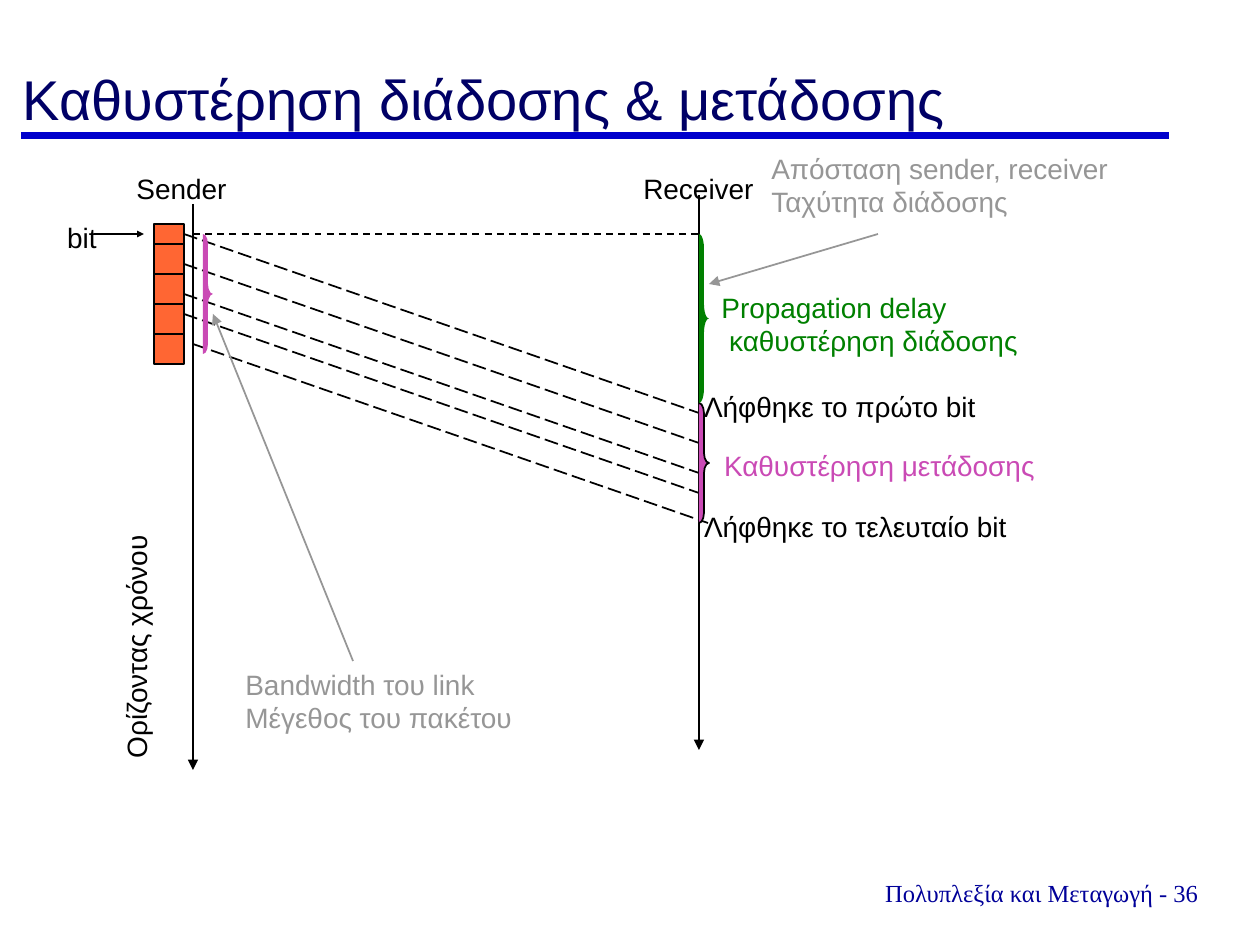
from lxml import etree
from pptx import Presentation
from pptx import util as u
from pptx.dml.color import RGBColor
from pptx.enum import dml, shapes, text
from pptx.oxml.ns import qn

PX = 914400 / 126
COLORS = {
    "black": "000000", "title": "000066", "rule": "0000CC", "footer": "000099",
    "bit": "FF6633", "transmission": "CA4AB5", "propagation": "008000", "note": "969696",
}
LEFT, CENTER, RIGHT = text.PP_ALIGN.LEFT, text.PP_ALIGN.CENTER, text.PP_ALIGN.RIGHT
LONG_DASH, DASH = dml.MSO_LINE.LONG_DASH, dml.MSO_LINE.DASH
SPAN = 506          # sender axis to receiver axis
BIT = 30            # side of one bit cell
PROPAGATION = 169
TRANSMISSION = 120


def px(*lengths):
    return [u.Emu(round(length * PX)) for length in lengths]


def rgb(name):
    return RGBColor.from_string(COLORS[name])


def add_line(slide, x1, y1, x2, y2, color="black", width=1, dash=None, arrow=None, size="med"):
    """Draw a line; arrow is "headEnd" (start) or "tailEnd" (finish)."""
    line = slide.shapes.add_connector(shapes.MSO_CONNECTOR.STRAIGHT, *px(x1, y1, x2, y2))
    line.line.color.rgb = rgb(color)
    line.line.width = u.Pt(width)
    if dash:
        line.line.dash_style = dash
    properties = line._element.spPr
    if arrow:
        etree.SubElement(properties.find(qn("a:ln")), qn("a:" + arrow),
                         type="triangle", w=size, len=size)
    etree.SubElement(properties, qn("a:effectLst"))


def add_text(slide, left, top, width, height, *lines, color="black", align=LEFT,
             size=16, font="Arial", wrap=False, anchor=text.MSO_ANCHOR.TOP, rotation=0):
    box = slide.shapes.add_textbox(*px(left, top, width, height))
    box.rotation = rotation
    frame = box.text_frame
    frame_format = {"word_wrap": wrap, "vertical_anchor": anchor}
    for name, value in frame_format.items():
        setattr(frame, name, value)
    frame.text = "\n".join(lines)
    for paragraph in frame.paragraphs:
        paragraph.alignment = align
        letters = paragraph.runs[0].font
        for name, value in {"name": font, "size": u.Pt(size)}.items():
            setattr(letters, name, value)
        letters.color.rgb = rgb(color)


def add_filled(slide, kind, left, top, width, height, fill, outline=None):
    shape = slide.shapes.add_shape(kind, *px(left, top, width, height))
    shape.shadow.inherit = False
    shape.fill.solid()
    shape.fill.fore_color.rgb = rgb(fill)
    if outline:
        shape.line.color.rgb = rgb(outline)
        shape.line.width = u.Pt(1)
    else:
        shape.line.fill.background()
    return shape


def add_brace(slide, left, top, height, fill, outline=None):
    brace = add_filled(slide, shapes.MSO_SHAPE.RIGHT_BRACE, left, top, 10, height, fill, outline)
    brace.adjustments[0] = height / TRANSMISSION
    brace.adjustments[1] = 0.5


def heading(slide, left, top):
    add_line(slide, left + 11, top + 104, left + 1159, top + 104, "rule", 4)
    add_text(slide, left, top, 1218, 106, "Καθυστέρηση διάδοσης & μετάδοσης", color="title",
             size=32, wrap=True, anchor=text.MSO_ANCHOR.BOTTOM)


def footer(slide, left, top):
    add_text(slide, left, top, 368, 42, "Πολυπλεξία και Μεταγωγή - 36 ", color="footer",
             align=CENTER, size=14, font="Times New Roman", wrap=True)


def signals(slide, axis, start):
    """Dashed paths of the bits, from the sender axis at the start time."""
    for delay, shift in ((0, 0), (30, 0), (60, 0), (80, 0), (110, 9)):
        x, y = axis - 9 + shift, start + delay
        add_line(slide, x, y, x + SPAN + 9, y + 179, dash=LONG_DASH)
    add_line(slide, axis, start, axis + SPAN, start, dash=DASH)


def sender(slide, axis, start):
    """Sender side, placed around its axis at the start time."""
    add_line(slide, axis, start - 30, axis, start + 536, arrow="tailEnd")
    add_text(slide, axis - 70, start - 69, 116, 47, "Sender", align=RIGHT)
    add_text(slide, axis - 182, start + 391, 251, 47, "Ορίζοντας χρόνου",
             align=RIGHT, rotation=270)
    add_text(slide, axis - 139, start - 20, 55, 47, "bit", align=RIGHT)
    add_line(slide, axis - 99, start, axis - 49, start, arrow="tailEnd", size="sm")
    for cell_top in (-10, *(10 + BIT * i for i in range(4))):
        add_filled(slide, shapes.MSO_SHAPE.RECTANGLE, axis - 39, start + cell_top,
                   BIT, BIT, "bit", "black")
    add_brace(slide, axis + 10, start, TRANSMISSION, "transmission")
    add_line(slide, axis + 20, start + 80, axis + 160, start + 427, "note", arrow="headEnd")
    add_text(slide, axis + 40, start + 427, 294, 81,
             "Bandwidth του link", "Μέγεθος του πακέτου", color="note")


def receiver(slide, axis, start):
    """Receiver side, placed around its axis at the start time."""
    first_bit = start + PROPAGATION
    add_line(slide, axis, start - 39, axis, start + 516, arrow="tailEnd")
    add_text(slide, axis - 69, start - 69, 136, 47, "Receiver", align=RIGHT)
    add_text(slide, axis - 10, first_bit - 20, 299, 47, "Λήφθηκε το πρώτο bit", align=RIGHT)
    add_text(slide, axis - 10, first_bit + 100, 330, 81, "Λήφθηκε το τελευταίο bit",
             align=RIGHT)
    add_brace(slide, axis, first_bit, TRANSMISSION, "transmission", "black")
    add_brace(slide, axis, start, PROPAGATION, "propagation")
    add_text(slide, axis + 10, start + 50, 323, 81,
             "Propagation delay", " καθυστέρηση διάδοσης", color="propagation")
    add_text(slide, axis + 10, first_bit + 39, 338, 47, "Καθυστέρηση μετάδοσης",
             color="transmission", align=RIGHT)
    add_line(slide, axis + 10, start + 50, axis + 179, start, "note", arrow="headEnd")
    add_text(slide, axis + 60, start - 89, 365, 81,
             "Απόσταση sender, receiver", "Ταχύτητα διάδοσης", color="note")


def main():
    deck = Presentation()
    deck.slide_width, deck.slide_height = u.Inches(10), u.Inches(7.5)
    slide = deck.slides.add_slide(deck.slide_layouts[6])
    heading(slide, 10, 32)
    footer(slide, 861, 872)
    sender_axis, start = 193, 234
    signals(slide, sender_axis, start)
    sender(slide, sender_axis, start)
    receiver(slide, sender_axis + SPAN, start)
    deck.save("out.pptx")


if __name__ == "__main__":
    main()
